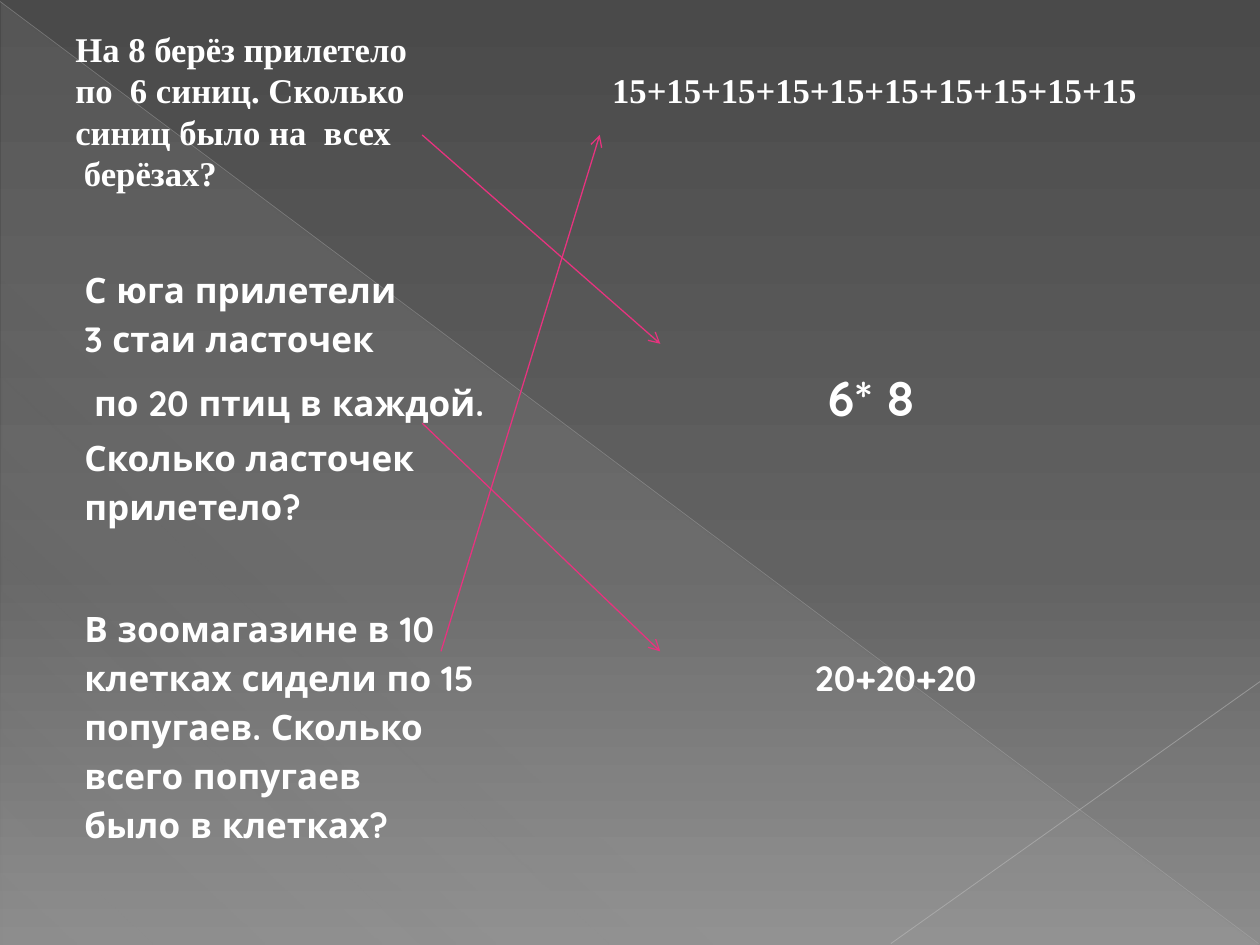
"""Build a slide that matches bird word problems to their expressions."""
from dataclasses import dataclass

from lxml import etree
from pptx import Presentation
from pptx import util as u
from pptx.dml.color import RGBColor
from pptx.enum import shapes, text
from pptx.oxml.ns import qn

WHITE = RGBColor(0xFF, 0xFF, 0xFF)
PINK = RGBColor(0xE7, 0x33, 0x7F)
SILVER = RGBColor(0xBF, 0xBF, 0xBF)
LIGHT_SILVER = RGBColor(0xC6, 0xC6, 0xC6)
PALE = RGBColor(0xD2, 0xD2, 0xD2)
DARK = RGBColor(0x4A, 0x4A, 0x4A)
MIDDLE = RGBColor(0x62, 0x62, 0x62)
BRIGHT = RGBColor(0x8C, 0x8C, 0x8C)


@dataclass
class Stop:
    position: int
    color: RGBColor
    opacity: int = 100


@dataclass
class Line:
    start: tuple[float, float]
    end: tuple[float, float]
    color: RGBColor = PINK
    width: float = 0.75
    opacity: int = 100
    arrow: bool = True


@dataclass
class Row:
    question: str
    answer: str = ""
    tab: float = 0
    answer_size: float = 20
    before: float = 0


@dataclass
class Block:
    box: tuple[float, float, float, float]
    rows: list[Row]
    font: str
    size: float
    spacing: float
    anchor: text.MSO_ANCHOR
    top_margin: float


BACKGROUND = [Stop(0, DARK), Stop(60, MIDDLE), Stop(100, BRIGHT)]
SHEEN = [Stop(0, PALE, 10), Stop(70, PALE, 8), Stop(100, PALE, 1)]
EDGES = [
    Line((0, 0.03), (25.37, 19.02), SILVER, 0.39, 35, False),
    Line((25.4, 13.74), (17.96, 19.02), LIGHT_SILVER, 0.47, 45, False),
]
ARROWS = [
    Line((8.51, 2.72), (13.31, 6.93)),
    Line((8.51, 8.53), (13.31, 13.13)),
    Line((8.89, 13.13), (12.09, 2.72)),
]
TITLE = Block(
    (1.09, 0.53, 23.06, 3.4),
    [
        Row("На 8 берёз прилетело"),
        Row("по  6 синиц. Сколько", "+".join(["15"] * 10), 10.82, 19.8),
        Row("синиц было на  всех"),
        Row(" берёзах?"),
    ],
    "Times New Roman", 19.8, 23.7, text.MSO_ANCHOR.MIDDLE, 0.13,
)
BODY = Block(
    (1.27, 5.23, 22.86, 12.7),
    [
        Row("С юга прилетели"),
        Row("3 стаи ласточек"),
        Row(" по 20 птиц в каждой.", "6* 8", 14.99, 28, before=10),
        Row("Сколько ласточек", before=1.5),
        Row("прилетело?"),
        Row("В зоомагазине в 10", before=41.7),
        Row("клетках сидели по 15", "20+20+20", 14.73),
        Row("попугаев. Сколько"),
        Row("всего попугаев"),
        Row("было в клетках?"),
    ],
    "Quicksand", 20, 28, text.MSO_ANCHOR.TOP, 0.05,
)


def set_opacity(color_element, opacity: int) -> None:
    if opacity < 100:
        etree.SubElement(color_element, qn("a:alpha"), val=str(opacity * 1000))


def fill_gradient(fill, element, stops: list[Stop], angle: int) -> None:
    fill.gradient()
    gradient = next(element.iter(qn("a:gradFill")))
    stop_list = gradient.find(qn("a:gsLst"))
    for old_stop in list(stop_list):
        stop_list.remove(old_stop)
    for stop in stops:
        item = etree.SubElement(stop_list, qn("a:gs"), pos=str(stop.position * 1000))
        color = etree.SubElement(item, qn("a:srgbClr"), val=str(stop.color))
        set_opacity(color, stop.opacity)
    gradient.find(qn("a:lin")).set("ang", str(angle * 60000))


def draw_sheen(slide) -> None:
    shape = slide.shapes.add_shape(
        shapes.MSO_SHAPE.RIGHT_TRIANGLE, u.Cm(0.03), u.Cm(0.05), u.Cm(25.35), u.Cm(19)
    )
    shape.shadow.inherit = False
    shape.line.fill.background()
    fill_gradient(shape.fill, shape.element, SHEEN, 133)


def draw_line(slide, line: Line) -> None:
    connector = slide.shapes.add_connector(
        shapes.MSO_CONNECTOR.STRAIGHT, *map(u.Cm, line.start + line.end)
    )
    connector.line.color.rgb = line.color
    connector.line.width = u.Pt(line.width)
    properties = connector.element.spPr
    set_opacity(next(properties.iter(qn("a:srgbClr"))), line.opacity)
    if line.arrow:
        etree.SubElement(properties.find(qn("a:ln")), qn("a:tailEnd"), type="arrow")
    etree.SubElement(properties, qn("a:effectLst"))


def add_run(paragraph, words: str, font: str, size: float) -> None:
    run = paragraph.add_run()
    run.text = words
    run.font.name = font
    run.font.size = u.Pt(size)
    run.font.bold = True
    run.font.color.rgb = WHITE


def set_tab(paragraph, position: float) -> None:
    properties = paragraph._p.get_or_add_pPr()
    tabs = etree.SubElement(properties, qn("a:tabLst"))
    etree.SubElement(tabs, qn("a:tab"), pos=str(u.Cm(position)), algn="l")


def draw_block(slide, block: Block) -> None:
    frame = slide.shapes.add_textbox(*map(u.Cm, block.box)).text_frame
    frame.word_wrap = True
    frame.vertical_anchor = block.anchor
    frame.margin_left = u.Cm(0.43)
    frame.margin_top = u.Cm(block.top_margin)
    for index, row in enumerate(block.rows):
        paragraph = frame.add_paragraph() if index else frame.paragraphs[0]
        paragraph.line_spacing = u.Pt(block.spacing)
        paragraph.space_before = u.Pt(row.before)
        add_run(paragraph, row.question, block.font, block.size)
        if row.answer:
            set_tab(paragraph, row.tab)
            add_run(paragraph, "\t" + row.answer, block.font, row.answer_size)


def main() -> None:
    presentation = Presentation()
    presentation.slide_width = u.Cm(25.4)
    presentation.slide_height = u.Cm(19.05)
    slide = presentation.slides.add_slide(presentation.slide_layouts[6])
    fill_gradient(slide.background.fill, slide.element, BACKGROUND, 90)
    draw_sheen(slide)
    for edge in EDGES:
        draw_line(slide, edge)
    for block in (TITLE, BODY):
        draw_block(slide, block)
    for arrow in ARROWS:
        draw_line(slide, arrow)
    presentation.save("out.pptx")


if __name__ == "__main__":
    main()
